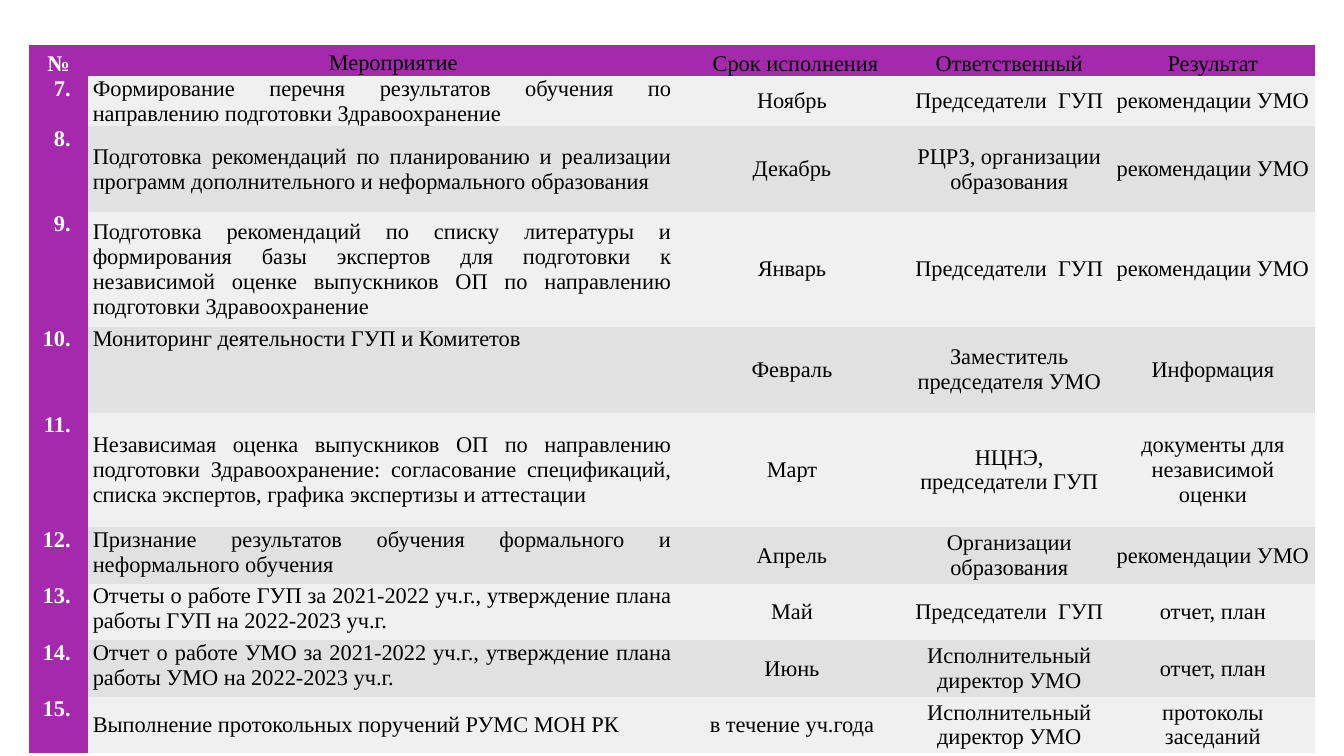
import pptx
import pptx.dml.color
import pptx.enum.text
import pptx.oxml.ns
import pptx.util

Inches = pptx.util.Inches
RGBColor = pptx.dml.color.RGBColor
ALIGN = pptx.enum.text.PP_ALIGN
ANCHOR = pptx.enum.text.MSO_ANCHOR

PURPLE = RGBColor(0xA4, 0x29, 0xAD)
LIGHT_GREY = RGBColor(0xF0, 0xF0, 0xF0)
MID_GREY = RGBColor(0xE1, 0xE1, 0xE1)
BLACK = RGBColor(0, 0, 0)
WHITE = RGBColor(0xFF, 0xFF, 0xFF)
PLAIN_TABLE_STYLE = "{2D5ABB26-0587-4C30-8999-92F81FD0307C}"

COLUMN_WIDTHS = [0.58, 5.84, 2.29, 2.02, 2.02]
ROW_HEIGHTS = [0.28, 0.28, 0.85, 1.14, 0.85, 1.14] + [0.56] * 4
HEADERS = ["№", "Мероприятие", "Срок исполнения", "Ответственный", "Результат"]
HEADER_INDENTS = [0, 0.22, 0.07, 0, 0]
FIRST_NUMBER = 7

# Activity, its vertical anchor, month, responsible, result
ACTIVITIES = [
    ("Формирование перечня результатов обучения по направлению подготовки Здравоохранение",
     ANCHOR.TOP, "Ноябрь", "Председатели  ГУП", "рекомендации УМО"),
    ("Подготовка рекомендаций по планированию и реализации программ дополнительного "
     "и неформального образования",
     ANCHOR.MIDDLE, "Декабрь", "РЦРЗ, организации образования", "рекомендации УМО"),
    ("Подготовка рекомендаций по списку литературы и формирования базы экспертов для "
     "подготовки к независимой оценке выпускников ОП по направлению подготовки Здравоохранение",
     ANCHOR.MIDDLE, "Январь", "Председатели  ГУП", "рекомендации УМО"),
    ("Мониторинг деятельности ГУП и Комитетов",
     ANCHOR.TOP, "Февраль", "Заместитель председателя УМО", "Информация"),
    ("Независимая оценка выпускников ОП по направлению подготовки Здравоохранение: "
     "согласование спецификаций, списка экспертов, графика экспертизы и аттестации",
     ANCHOR.MIDDLE, "Март", "НЦНЭ, председатели ГУП", "документы для независимой оценки"),
    ("Признание результатов обучения формального и неформального обучения",
     ANCHOR.TOP, "Апрель", "Организации образования", "рекомендации УМО"),
    ("Отчеты о работе ГУП за 2021-2022 уч.г., утверждение плана работы ГУП на 2022-2023 уч.г.",
     ANCHOR.TOP, "Май", "Председатели  ГУП", "отчет, план"),
    ("Отчет о работе УМО за 2021-2022 уч.г., утверждение плана работы УМО на 2022-2023 уч.г.",
     ANCHOR.TOP, "Июнь", "Исполнительный директор УМО", "отчет, план"),
    ("Выполнение протокольных поручений РУМС МОН РК",
     ANCHOR.MIDDLE, "в течение уч.года", "Исполнительный директор УМО", "протоколы заседаний"),
]


def write_text(text_frame, text, font="Times New Roman", size=16, color=BLACK, bold=False,
               align=ALIGN.CENTER, line_spacing=1.0, indent=0):
    paragraph = text_frame.paragraphs[0]
    paragraph.alignment = align
    paragraph.line_spacing = line_spacing
    if indent:
        paragraph_properties = paragraph._p.get_or_add_pPr()
        paragraph_properties.set("marL", "0")
        paragraph_properties.set("indent", str(Inches(indent)))
    run = paragraph.add_run()
    run.text = text
    run.font.name = font
    run.font.size = pptx.util.Pt(size)
    run.font.bold = bold
    run.font.color.rgb = color


class PlanSlide:
    def __init__(self, presentation):
        self.slide = presentation.slides.add_slide(presentation.slide_layouts[6])

    def add_table(self, left, top, column_widths, row_heights):
        frame = self.slide.shapes.add_table(
            len(row_heights), len(column_widths), Inches(left), Inches(top),
            Inches(sum(column_widths)), Inches(sum(row_heights)))
        table = frame.table
        table.horz_banding = False
        style = table._tbl.tblPr.find(pptx.oxml.ns.qn("a:tableStyleId"))
        style.text = PLAIN_TABLE_STYLE
        for column, width in zip(table.columns, column_widths):
            column.width = Inches(width)
        for row, height in zip(table.rows, row_heights):
            row.height = Inches(height)
        return table

    def fill_cell(self, cell, text, fill, anchor=ANCHOR.MIDDLE, margin=0.05,
                  margin_right=None, **text_format):
        cell.fill.solid()
        cell.fill.fore_color.rgb = fill
        cell.vertical_anchor = anchor
        cell.margin_top = cell.margin_bottom = 0
        cell.margin_left = Inches(margin)
        cell.margin_right = Inches(margin if margin_right is None else margin_right)
        write_text(cell.text_frame, text, **text_format)


def main():
    presentation = pptx.Presentation()
    presentation.slide_width = Inches(13.33)
    presentation.slide_height = Inches(7.5)
    plan = PlanSlide(presentation)
    table = plan.add_table(0.29, 0.45, COLUMN_WIDTHS, ROW_HEIGHTS)

    # Header row
    for index, (header, indent) in enumerate(zip(HEADERS, HEADER_INDENTS)):
        is_number = index == 0
        plan.fill_cell(table.cell(0, index), header, PURPLE, margin=0.07,
                       anchor=ANCHOR.TOP if index == 4 else ANCHOR.MIDDLE,
                       color=WHITE if is_number else BLACK, bold=is_number,
                       line_spacing=1.15 if index == 1 else 1.25, indent=indent)

    # Numbered activities on alternating bands
    for row, (activity, anchor, *details) in enumerate(ACTIVITIES, start=1):
        band = LIGHT_GREY if row % 2 else MID_GREY
        plan.fill_cell(table.cell(row, 0), f"{FIRST_NUMBER + row - 1}.", PURPLE,
                       anchor=ANCHOR.TOP, margin_right=0.17, color=WHITE, bold=True,
                       align=ALIGN.RIGHT)
        plan.fill_cell(table.cell(row, 1), activity, band, anchor=anchor, align=ALIGN.JUSTIFY)
        for column, detail in enumerate(details, start=2):
            plan.fill_cell(table.cell(row, column), detail, band)

    presentation.save("out.pptx")


if __name__ == "__main__":
    main()
